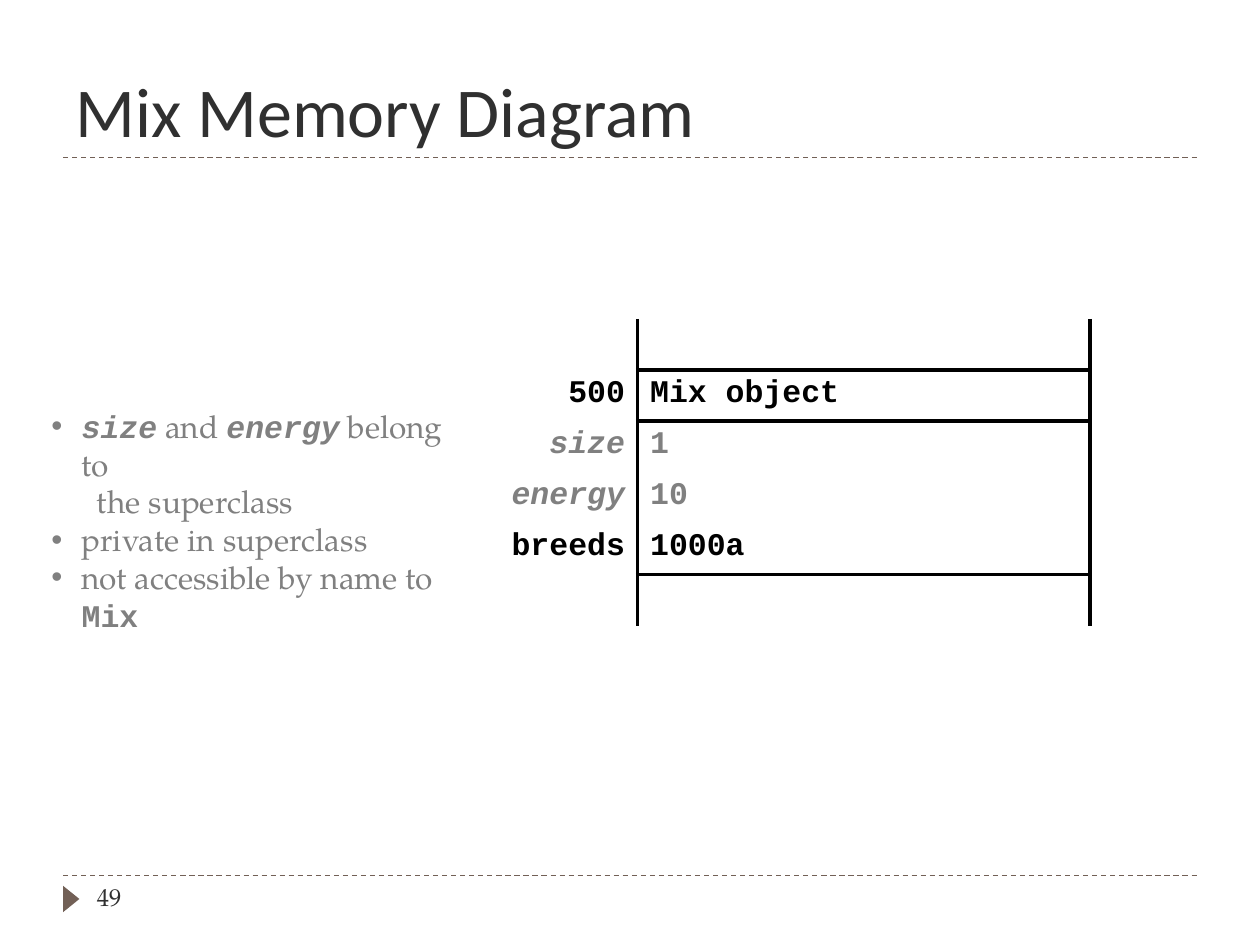
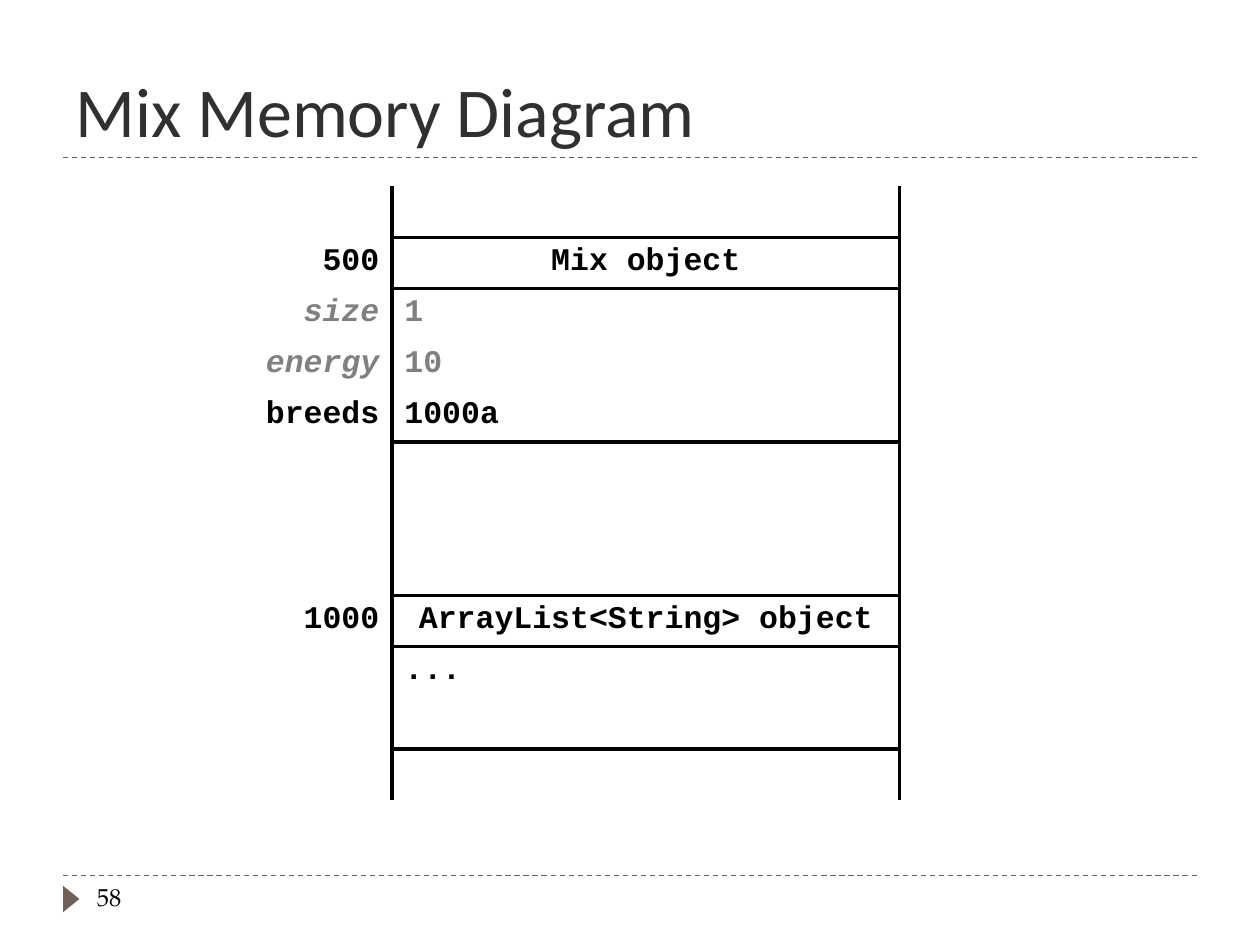
from dataclasses import dataclass

from lxml.etree import SubElement
from pptx import Presentation
from pptx.dml.color import RGBColor
from pptx.enum.dml import MSO_LINE_DASH_STYLE as Dash
from pptx.enum.shapes import MSO_CONNECTOR as Connector, MSO_SHAPE as Shape
from pptx.enum.text import MSO_ANCHOR as Anchor, PP_ALIGN as Align
from pptx.oxml.ns import qn
from pptx.util import Inches, Pt


@dataclass(frozen=True)
class Theme:
    ink: str = "000000"
    title: str = "303030"
    inherited: str = "808080"
    accent: str = "726056"
    heading_font: str = "Calibri"
    body_font: str = "TeX Gyre Pagella"
    code_font: str = "Courier New"
    title_size: int = 40
    body_size: int = 18
    number_size: int = 14
    rule_width: float = 0.75
    border_width: float = 2.25


THEME = Theme()
TITLE = "Mix Memory Diagram"
NO_GRID_STYLE = "{2D5ABB26-0587-4C30-8999-92F81FD0307C}"
ROW_HEIGHT = 0.406

EMPTY = ("", "", False)
EMPTY_RULED = ("", "", True)
FIELD_ROWS = [("size", "1", False), ("energy", "10", False), ("breeds", "1000a", True)]
MIX_ROWS = [EMPTY_RULED, ("500", "Mix object", True), *FIELD_ROWS]
LIST_ROWS = [("1000", "ArrayList<String> object", True), ("", "...", False), EMPTY_RULED]
INHERITED_FIELDS = ("size", "energy")

NOTES = [
    ("bullet", [("size", "field"), (" and ", "text"), ("energy", "field"), (" belong to", "text")]),
    ("continued", [("the superclass", "text")]),
    ("bullet", [("private in superclass", "text")]),
    ("bullet", [("not accessible by name to ", "text"), ("Mix", "code")]),
]

SLIDES = [
    dict(number="49", number_color=THEME.title, left=3.94, top=2.53, columns=(1.12, 3.59),
         heading_align=Align.LEFT, rows=[*MIX_ROWS, EMPTY], notes=NOTES),
    dict(number="58", number_color=THEME.ink, left=1.91, top=1.48, columns=(1.2, 4.03),
         heading_align=Align.CENTER, rows=[*MIX_ROWS, EMPTY, EMPTY, EMPTY_RULED, *LIST_ROWS, EMPTY],
         notes=[]),
]


def set_font(font, name, size, color, bold=False, italic=False):
    font.name, font.size = name, Pt(size)
    font.color.rgb = RGBColor.from_string(color)
    font.bold, font.italic = bold, italic


def add_title(slide):
    title = slide.shapes.title
    title.left, title.top, title.width, title.height = map(Inches, (0.5, 0.25, 9, 1))
    title.text_frame.text = TITLE
    title.text_frame.vertical_anchor = Anchor.BOTTOM
    paragraph = title.text_frame.paragraphs[0]
    paragraph.alignment = Align.LEFT
    set_font(paragraph.font, THEME.heading_font, THEME.title_size, THEME.title)


def add_frame(slide, number, number_color):
    accent = RGBColor.from_string(THEME.accent)
    for y in (6.95, 1.25):
        rule = slide.shapes.add_connector(
            Connector.STRAIGHT, Inches(0.5), Inches(y), Inches(9.5), Inches(y))
        rule.line.color.rgb = accent
        rule.line.width = Pt(THEME.rule_width)
        rule.line.dash_style = Dash.DASH
        SubElement(rule.element.spPr, qn("a:effectLst"))

    marker = slide.shapes.add_shape(
        Shape.ISOSCELES_TRIANGLE, Inches(0.46), Inches(7.07), Inches(0.21), Inches(0.13))
    marker.rotation = 90
    marker.shadow.inherit = False
    marker.fill.solid()
    marker.fill.fore_color.rgb = accent
    marker.line.fill.background()

    box = slide.shapes.add_textbox(Inches(0.67), Inches(6.95), Inches(2.17), Inches(0.4))
    box.text_frame.word_wrap = True
    paragraph = box.text_frame.paragraphs[0]
    paragraph.text = number
    set_font(paragraph.font, THEME.body_font, THEME.number_size, number_color)


def set_borders(cell, sides):
    properties = cell._tc.get_or_add_tcPr()
    for side in "LRTB":
        width = str(Pt(THEME.border_width) if side in sides else 0)
        line = SubElement(properties, qn(f"a:ln{side}"), w=width)
        if side in sides:
            fill = SubElement(line, qn("a:solidFill"))
            SubElement(fill, qn("a:srgbClr"), val=THEME.ink)
        else:
            SubElement(line, qn("a:noFill"))
    cell.fill.background()


def fill_cell(cell, text, color, align, italic, sides):
    set_borders(cell, sides)
    paragraph = cell.text_frame.paragraphs[0]
    paragraph.text = text
    paragraph.alignment = align
    set_font(paragraph.font, THEME.code_font, THEME.body_size, color, True, italic)


def add_memory_table(slide, left, top, columns, rows, heading_align):
    table = slide.shapes.add_table(
        len(rows), len(columns), Inches(left), Inches(top),
        Inches(sum(columns)), Inches(ROW_HEIGHT * len(rows))).table
    table.first_row = table.horz_banding = False
    table._tbl.tblPr.find(qn("a:tableStyleId")).text = NO_GRID_STYLE
    for column, width in zip(table.columns, columns):
        column.width = Inches(width)

    ruled_above = False
    for index, (label, value, ruled_below) in enumerate(rows):
        table.rows[index].height = Inches(ROW_HEIGHT)
        inherited = label in INHERITED_FIELDS
        color = THEME.inherited if inherited else THEME.ink
        align = heading_align if value.endswith("object") else Align.LEFT
        sides = "LR" + "T" * ruled_above + "B" * ruled_below
        fill_cell(table.cell(index, 0), label, color, Align.RIGHT, inherited, "R")
        fill_cell(table.cell(index, 1), value, color, align, False, sides)
        ruled_above = ruled_below


def add_notes(slide, notes):
    box = slide.shapes.add_textbox(Inches(0.31), Inches(3.18), Inches(3.5), Inches(1.31))
    frame = box.text_frame
    frame.word_wrap = True
    for index, (kind, runs) in enumerate(notes):
        paragraph = frame.paragraphs[0] if index == 0 else frame.add_paragraph()
        properties = paragraph._p.get_or_add_pPr()
        if kind == "bullet":
            properties.set("marL", str(Inches(0.24)))
            properties.set("indent", str(Inches(-0.24)))
            SubElement(properties, qn("a:buFont"), typeface="Arial")
            SubElement(properties, qn("a:buChar"), char="•")
        else:
            properties.set("marL", str(Inches(0.36)))
            properties.set("indent", "0")
            SubElement(properties, qn("a:buNone"))
        for text, style in runs:
            run = paragraph.add_run()
            run.text = text
            is_code = style != "text"
            name = THEME.code_font if is_code else THEME.body_font
            set_font(run.font, name, THEME.body_size, THEME.inherited, is_code, style == "field")


def main():
    presentation = Presentation()
    presentation.slide_width, presentation.slide_height = Inches(10), Inches(7.5)
    for content in SLIDES:
        slide = presentation.slides.add_slide(presentation.slide_layouts[5])
        add_title(slide)
        add_frame(slide, content["number"], content["number_color"])
        add_memory_table(slide, content["left"], content["top"], content["columns"],
                         content["rows"], content["heading_align"])
        if content["notes"]:
            add_notes(slide, content["notes"])
    presentation.save("out.pptx")


if __name__ == "__main__":
    main()
